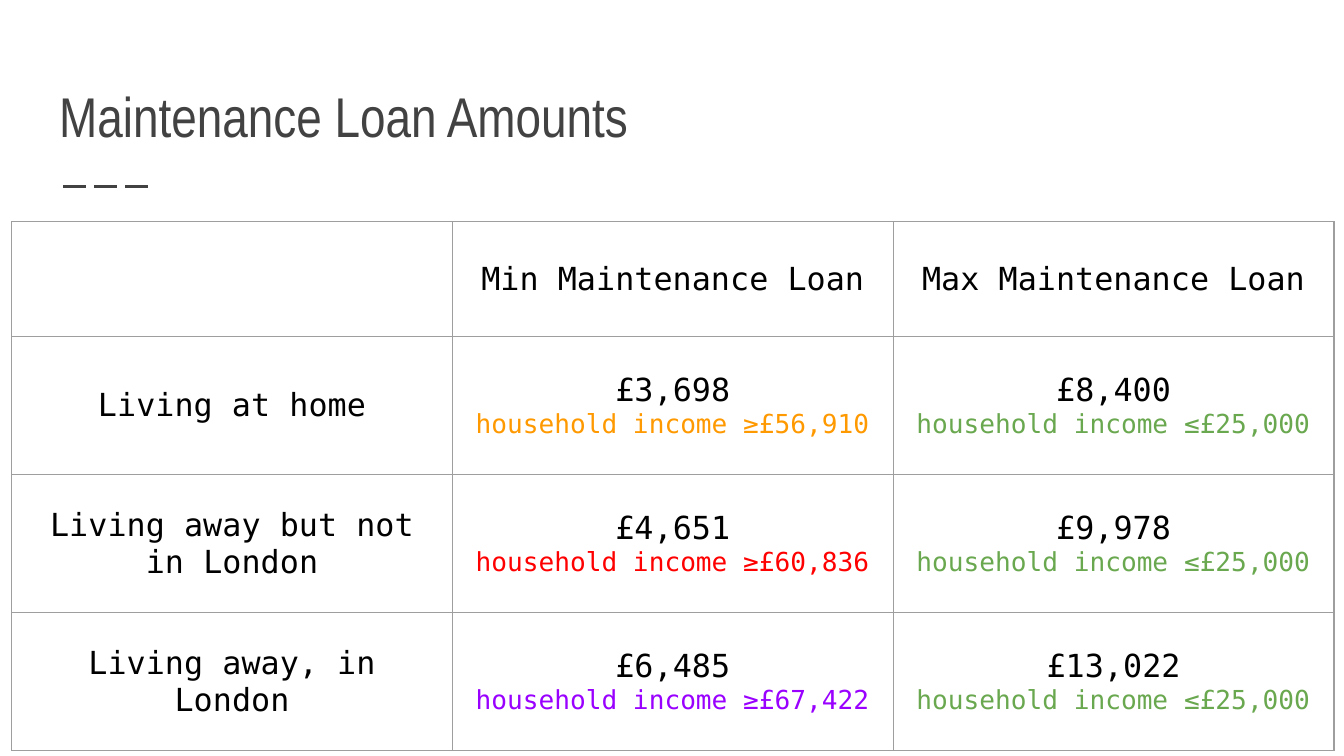
from dataclasses import dataclass

from lxml import etree
from pptx import Presentation
from pptx.dml.color import RGBColor
from pptx.enum.dml import MSO_LINE
from pptx.enum.shapes import MSO_CONNECTOR
from pptx.enum.text import MSO_ANCHOR, PP_ALIGN
from pptx.oxml.ns import qn
from pptx.util import Cm, Pt

DASH = MSO_LINE.LONG_DASH
STRAIGHT = MSO_CONNECTOR.STRAIGHT
BOTTOM, MIDDLE = MSO_ANCHOR.BOTTOM, MSO_ANCHOR.MIDDLE
LEFT, CENTER = PP_ALIGN.LEFT, PP_ALIGN.CENTER


@dataclass(frozen=True)
class Theme:
    head_font: str = "Arial Narrow"
    body_font: str = "DejaVu Sans Mono"
    head_size: float = 30
    body_size: float = 17
    note_size: float = 14
    rule: float = 1.5
    edge: float = 0.75
    gray: str = "424242"
    grid: str = "9E9E9E"
    white: str = "FFFFFF"
    black: str = "000000"
    green: str = "6AA84F"
    orange: str = "FF9900"
    red: str = "FF0000"
    purple: str = "9900FF"


@dataclass(frozen=True)
class Line:
    text: str
    font: str
    size: float
    color: str


@dataclass(frozen=True)
class Loan:
    home: str
    least: str
    floor: str
    color: str
    most: str


THEME = Theme()
PAD = Cm(0.25)
MARGINS = {f"margin_{side}": PAD for side in ("left", "right", "top", "bottom")}
COL = Cm(8.33)
HEAD_ROW, LOAN_ROW = Cm(2.17), Cm(2.61)
HEADS = ("", "Min Maintenance Loan", "Max Maintenance Loan")
LOANS = (
    Loan("Living at home", "£3,698", "≥£56,910", THEME.orange, "£8,400"),
    Loan("Living away but not in London", "£4,651", "≥£60,836", THEME.red, "£9,978"),
    Loan("Living away, in London", "£6,485", "≥£67,422", THEME.purple, "£13,022"),
)
LIMIT = "≤£25,000"


def set_all(item, values: dict) -> None:
    for name, value in values.items():
        setattr(item, name, value)


def write(frame, lines: list[Line], align) -> None:
    """Put each line in its own paragraph."""
    for i, line in enumerate(lines):
        para = frame.paragraphs[0] if i == 0 else frame.add_paragraph()
        para.alignment = align
        run = para.add_run()
        run.text = line.text
        set_all(run.font, {"name": line.font, "size": Pt(line.size)})
        run.font.color.rgb = RGBColor.from_string(line.color)


def body(text: str) -> list[Line]:
    return [Line(text, THEME.body_font, THEME.body_size, THEME.black)] if text else []


def amount(sum_text: str, bound: str, color: str) -> list[Line]:
    """An amount with its income bound below."""
    note = Line(f"household income {bound}", THEME.body_font, THEME.note_size, color)
    return body(sum_text) + [note]


def add_title(slide) -> None:
    box = slide.shapes.add_textbox(Cm(0.87), Cm(1.04), Cm(23.67), Cm(2.03))
    frame = box.text_frame
    set_all(frame, {"word_wrap": True, "vertical_anchor": BOTTOM, **MARGINS})
    title = Line("Maintenance Loan Amounts", THEME.head_font, THEME.head_size, THEME.gray)
    write(frame, [title], LEFT)


def add_rule(slide) -> None:
    y = Cm(3.53)
    rule = slide.shapes.add_connector(STRAIGHT, Cm(1.2), y, Cm(2.9), y)
    set_all(rule.line, {"width": Pt(THEME.rule), "dash_style": DASH})
    rule.line.color.rgb = RGBColor.from_string(THEME.gray)
    etree.SubElement(rule._element.spPr, qn("a:effectLst"))


def add_edges(cell) -> None:
    props = cell._tc.get_or_add_tcPr()
    for i, side in enumerate(("lnL", "lnR", "lnT", "lnB")):
        edge = etree.Element(qn(f"a:{side}"), w=str(Pt(THEME.edge)))
        fill = etree.SubElement(edge, qn("a:solidFill"))
        etree.SubElement(fill, qn("a:srgbClr"), val=THEME.grid)
        props.insert(i, edge)


def add_loans(slide) -> None:
    rows = [[body(head) for head in HEADS]]
    for loan in LOANS:
        rows.append([
            body(loan.home),
            amount(loan.least, loan.floor, loan.color),
            amount(loan.most, LIMIT, THEME.green),
        ])
    tall = HEAD_ROW + len(LOANS) * LOAN_ROW
    shape = slide.shapes.add_table(
        len(rows), len(HEADS), Cm(0.22), Cm(4.19), len(HEADS) * COL, tall)
    table = shape.table
    set_all(table, {"first_row": False, "horz_banding": False})
    for col in table.columns:
        col.width = COL
    for r, row in enumerate(rows):
        table.rows[r].height = LOAN_ROW if r else HEAD_ROW
        for c, lines in enumerate(row):
            cell = table.cell(r, c)
            set_all(cell, {"vertical_anchor": MIDDLE, **MARGINS})
            cell.fill.solid()
            cell.fill.fore_color.rgb = RGBColor.from_string(THEME.white)
            add_edges(cell)
            write(cell.text_frame, lines, CENTER)


def main() -> None:
    deck = Presentation()
    set_all(deck, {"slide_width": Cm(25.4), "slide_height": Cm(14.29)})
    slide = deck.slides.add_slide(deck.slide_layouts[6])
    add_rule(slide)
    add_title(slide)
    add_loans(slide)
    deck.save("out.pptx")


if __name__ == "__main__":
    main()
